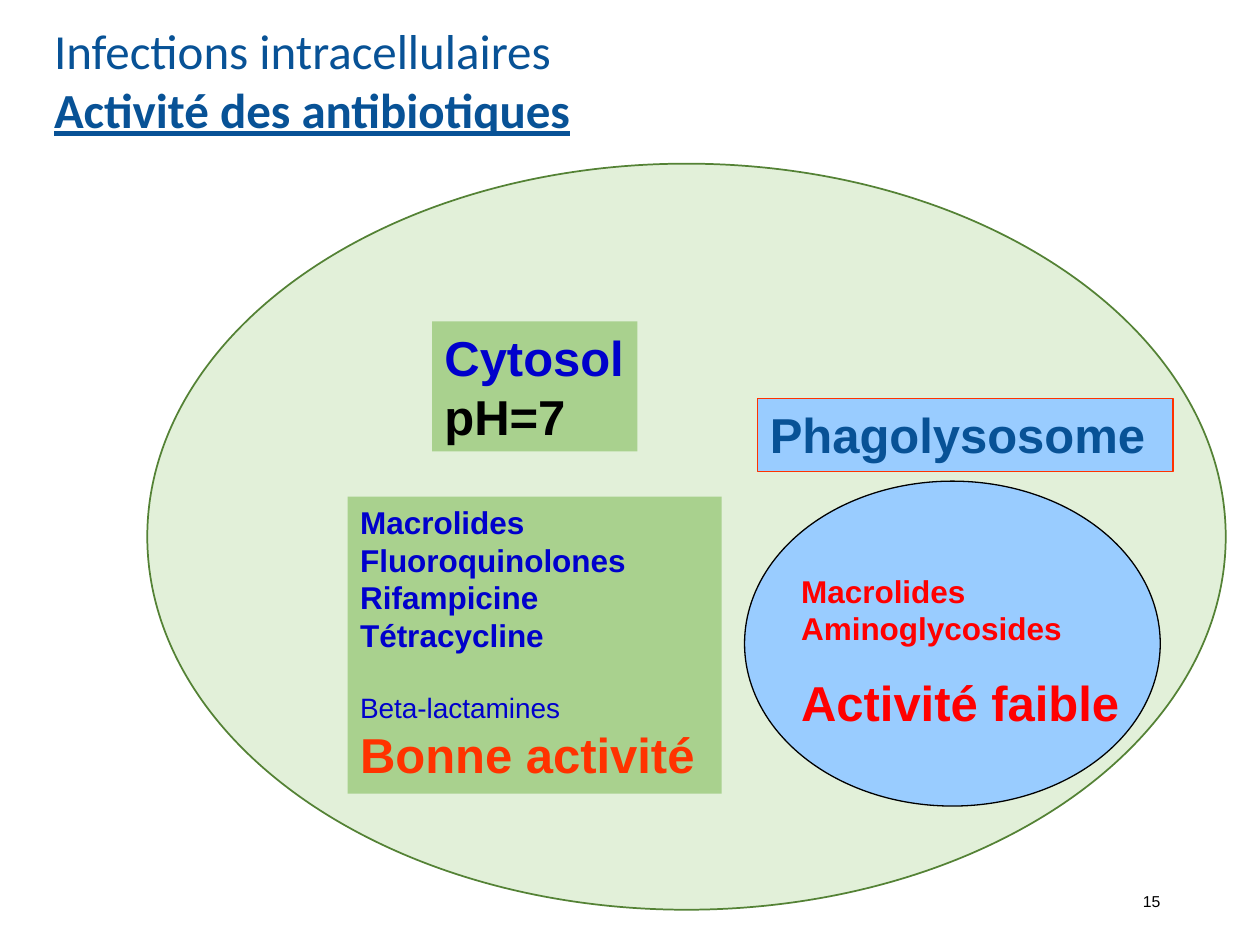
import pptx
import pptx.util
import pptx.dml.color
import pptx.enum.shapes
import pptx.enum.text

Cm, Pt = pptx.util.Cm, pptx.util.Pt
SHAPE = pptx.enum.shapes.MSO_SHAPE
ALIGN = pptx.enum.text.PP_ALIGN
ANCHOR = pptx.enum.text.MSO_ANCHOR

NAVY, BLUE, RED, ORANGE, BLACK = "085296", "0000CC", "FF0000", "FF3300", "000000"
SKY, GREEN, PALE_GREEN, DARK_GREEN = "99CCFF", "A9D18E", "E2F0D9", "548235"


def rgb(value):
    return pptx.dml.color.RGBColor.from_string(value)


def add_panel(slide, kind, box, fill, line=None, width=0.75):
    sp = slide.shapes.add_shape(kind, *map(Cm, box))
    sp.shadow.inherit = False
    sp.fill.solid()
    sp.fill.fore_color.rgb = rgb(fill)
    if line:
        sp.line.color.rgb = rgb(line)
        sp.line.width = Pt(width)
    else:
        sp.line.fill.background()
    return sp


def add_text_box(slide, box):
    return slide.shapes.add_textbox(*map(Cm, box))


def write(sp, lines, anchor=ANCHOR.TOP, align=ALIGN.LEFT, wrap=True):
    """Fill a shape with one paragraph per (text, size, colour, bold) line."""
    tf = sp.text_frame
    tf.word_wrap = wrap
    tf.vertical_anchor = anchor
    for i, (text, size, colour, bold) in enumerate(lines):
        p = tf.paragraphs[0] if i == 0 else tf.add_paragraph()
        p.alignment = align
        r = p.add_run()
        r.text = text
        r.font.name = "Arial"
        r.font.size = Pt(size)
        r.font.bold = bold
        r.font.color.rgb = rgb(colour)
    return tf


def add_title(slide, box):
    tf = write(add_text_box(slide, box), [
        ("Infections intracellulaires", 28, NAVY, False),
        ("Activité des antibiotiques", 28, NAVY, True),
    ], anchor=ANCHOR.MIDDLE)
    for p in tf.paragraphs:
        p.runs[0].font.name = "Calibri"
    tf.paragraphs[1].runs[0].font.underline = True


def add_cytosol(slide, x, y, w, h):
    label = add_panel(slide, SHAPE.RECTANGLE, (x + 1.7, y, 4.14, 2.62), GREEN)
    write(label, [("Cytosol", 28, BLUE, True), ("pH=7", 28, BLACK, True)], wrap=False)

    drugs = add_panel(slide, SHAPE.RECTANGLE, (x, y + 3.53, w, h - 3.53), GREEN)
    tf = write(drugs, [
        ("Macrolides Fluoroquinolones Rifampicine", 18, BLUE, True),
        ("Tétracycline", 18, BLUE, True),
        ("Beta-lactamines", 16, BLUE, False),
        ("Bonne activité", 28, ORANGE, True),
    ])
    tf.paragraphs[2].space_before = Pt(21)


def add_phagolysosome(slide, x, y, w, h):
    add_panel(slide, SHAPE.OVAL, (x, y + 1.67, w, h - 1.67), SKY, BLACK)
    label = add_panel(slide, SHAPE.RECTANGLE, (x + 0.26, y, w, 1.47), SKY, ORANGE)
    write(label, [("Phagolysosome", 28, NAVY, True)])
    write(add_text_box(slide, (x + 0.89, y + 3.37, 5.77, 1.78)), [
        ("Macrolides", 18, RED, True),
        ("Aminoglycosides", 18, RED, True),
    ], wrap=False)
    write(add_text_box(slide, (x + 0.89, y + 5.41, 8.31, 1.45)),
          [("Activité faible", 28, RED, True)])


def add_cell(slide, x, y, w, h):
    add_panel(slide, SHAPE.OVAL, (x, y, w, h), PALE_GREEN, DARK_GREEN, 1)
    add_phagolysosome(slide, x + 12.04, y + 4.73, 8.38, 8.22)
    add_cytosol(slide, x + 4.04, y + 3.18, 7.54, 9.52)


def add_page_number(slide, box):
    write(add_text_box(slide, box), [("15", 9, BLACK, False)],
          anchor=ANCHOR.MIDDLE, align=ALIGN.RIGHT)


def main():
    prs = pptx.Presentation()
    prs.slide_width, prs.slide_height = Cm(25.4), Cm(19.05)
    slide = prs.slides.add_slide(prs.slide_layouts[6])
    add_cell(slide, 2.97, 3.3, 21.74, 15.04)
    add_title(slide, (0.84, 0.76, 22.05, 1.68))
    add_page_number(slide, (16.81, 17.65, 6.83, 1.02))
    prs.save("out.pptx")


if __name__ == "__main__":
    main()
